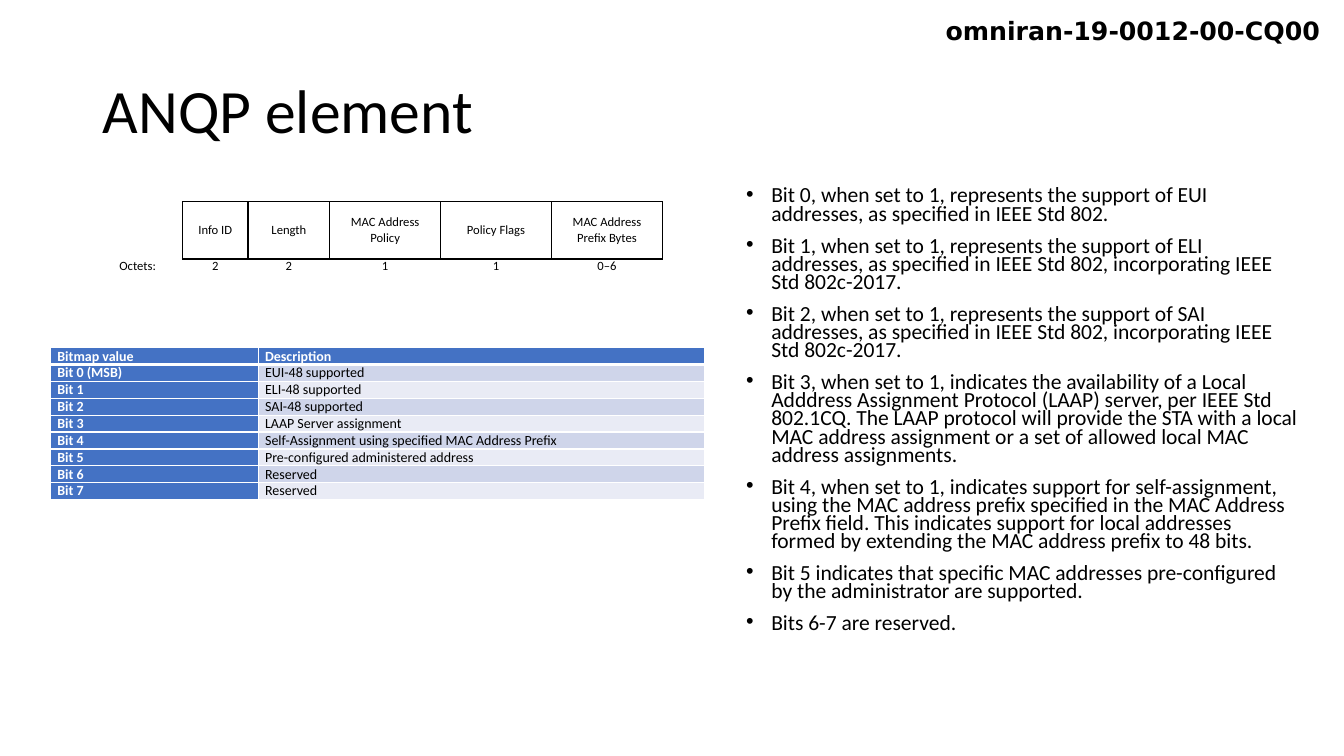
from lxml import etree
from pptx import Presentation
from pptx.dml.color import RGBColor
from pptx.enum.text import MSO_ANCHOR, MSO_AUTO_SIZE, PP_ALIGN
from pptx.oxml.ns import qn
from pptx.util import Inches, Pt

LEFT, CENTER = PP_ALIGN.LEFT, PP_ALIGN.CENTER
TOP, MIDDLE = MSO_ANCHOR.TOP, MSO_ANCHOR.MIDDLE
NO_FIT = MSO_AUTO_SIZE.NONE
COLORS = {"black": "000000", "white": "FFFFFF", "blue": "4472C4",
          "band_dark": "CFD5EA", "band_light": "E9EBF5"}


def write(p, text, size, color="black", bold=False, name="Calibri", align=LEFT):
    p.alignment = align
    r = p.add_run()
    r.text = text
    font = {"size": Pt(size), "bold": bold, "name": name}
    for key, value in font.items():
        setattr(r.font, key, value)
    r.font.color.rgb = RGBColor.from_string(COLORS[color])


def style_cell(cell, fill, borders, anchor):
    """borders maps a side (L, R, T, B) to a colour name and a width in points."""
    layout = {"margin_left": Inches(0.07), "margin_right": Inches(0.07),
              "margin_top": 0, "margin_bottom": 0, "vertical_anchor": anchor}
    for key, value in layout.items():
        setattr(cell, key, value)
    if fill:
        cell.fill.solid()
        cell.fill.fore_color.rgb = RGBColor.from_string(COLORS[fill])
    else:
        cell.fill.background()
    tcPr = cell._tc.get_or_add_tcPr()
    for i, side in enumerate("LRTB"):
        ln = etree.Element(qn(f"a:ln{side}"))
        if side in borders:
            color, width = borders[side]
            ln.set("w", str(Pt(width)))
            solid = etree.SubElement(ln, qn("a:solidFill"))
            etree.SubElement(solid, qn("a:srgbClr"), val=COLORS[color])
        else:
            etree.SubElement(ln, qn("a:noFill"))
        tcPr.insert(i, ln)


prs = Presentation()
prs.slide_width, prs.slide_height = Inches(13.33), Inches(7.5)
s = prs.slides.add_slide(prs.slide_layouts[1])

# Document number
sp = s.shapes.add_textbox(Inches(9.28), Inches(0.1), Inches(4.05), Inches(0.4))
sp.text_frame.word_wrap = False
write(sp.text_frame.paragraphs[0], "omniran-19-0012-00-CQ00", 18, bold=True,
      name="DejaVu Sans")

# Title and body placeholders
title, body = s.shapes.title, s.placeholders[1]
for sp, box, anchor in [(title, (0.92, 0.4, 11.5, 1.45), MIDDLE),
                        (body, (7.3, 1.82, 5.67, 4.76), TOP)]:
    sp.left, sp.top, sp.width, sp.height = [Inches(v) for v in box]
    tf = sp.text_frame
    tf.word_wrap, tf.auto_size, tf.vertical_anchor = True, NO_FIT, anchor
p = title.text_frame.paragraphs[0]
p.line_spacing = 0.9
write(p, "ANQP element", 44)

# Bit explanations
bits = [
    "Bit 0, when set to 1, represents the support of EUI addresses, as specified in IEEE Std 802.",
    "Bit 1, when set to 1, represents the support of ELI addresses, as specified in IEEE Std 802, "
    "incorporating IEEE Std 802c-2017.",
    "Bit 2, when set to 1, represents the support of SAI addresses, as specified in IEEE Std 802, "
    "incorporating IEEE Std 802c-2017.",
    "Bit 3, when set to 1, indicates the availability of a Local Adddress Assignment Protocol "
    "(LAAP) server, per IEEE Std 802.1CQ. The LAAP protocol will provide the STA with a local "
    "MAC address assignment or a set of allowed local MAC address assignments.",
    "Bit 4, when set to 1, indicates support for self-assignment, using the MAC address prefix "
    "specified in the MAC Address Prefix field. This indicates support for local addresses "
    "formed by extending the MAC address prefix to 48 bits.",
    "Bit 5 indicates that specific MAC addresses pre-configured by the administrator are supported.",
    "Bits 6-7 are reserved.",
]
tf = body.text_frame
for i, text in enumerate(bits):
    p = tf.add_paragraph() if i else tf.paragraphs[0]
    p.line_spacing, p.space_before = 0.7, Pt(10)
    write(p, text, 15.4)
    pPr = p._p.get_or_add_pPr()
    pPr.set("marL", str(Inches(0.25)))
    pPr.set("indent", str(Inches(-0.25)))
    etree.SubElement(pPr, qn("a:buFont"), typeface="Arial")
    etree.SubElement(pPr, qn("a:buChar"), char="•")

# Element format: boxed fields above their octet counts
fields = [("", "Octets:"), ("Info ID", "2"), ("Length", "2"), ("MAC Address Policy", "1"),
          ("Policy Flags", "1"), ("MAC Address Prefix Bytes", "0–6")]
widths = [0.89, 0.65, 0.81, 1.1, 1.1, 1.1]
table = s.shapes.add_table(2, len(fields), Inches(0.92), Inches(2),
                           Inches(sum(widths)), Inches(0.71)).table
table.first_row = table.horz_banding = False
table.rows[0].height, table.rows[1].height = Inches(0.57), Inches(0.14)
for c, (column, width) in enumerate(zip(fields, widths)):
    table.columns[c].width = Inches(width)
    for r, text in enumerate(column):
        cell = table.cell(r, c)
        sides = [["R", "LRTB"], ["", "T"]][r][c > 0]
        style_cell(cell, None, {side: ("black", 1) for side in sides}, MIDDLE if r == 0 else TOP)
        p = cell.text_frame.paragraphs[0]
        if r == 0:
            p.space_before = p.space_after = Pt(2)
        if text:
            write(p, text, 9, align=CENTER)

# Bitmap values
bitmap = [("Bitmap value", "Description"), ("Bit 0 (MSB)", "EUI-48 supported"),
          ("Bit 1", "ELI-48 supported"), ("Bit 2", "SAI-48 supported"),
          ("Bit 3", "LAAP Server assignment"),
          ("Bit 4", "Self-Assignment using specified MAC Address Prefix"),
          ("Bit 5", "Pre-configured administered address"),
          ("Bit 6", "Reserved"), ("Bit 7", "Reserved")]
table = s.shapes.add_table(len(bitmap), 2, Inches(0.5), Inches(3.45),
                           Inches(6.49), Inches(1.5)).table
table.columns[0].width, table.columns[1].width = Inches(2.06), Inches(4.43)
for r, row in enumerate(bitmap):
    table.rows[r].height = Inches(1.5 / len(bitmap))
    for c, text in enumerate(row):
        cell = table.cell(r, c)
        heading = r == 0 or c == 0
        fill = "blue" if heading else "band_dark" if r % 2 else "band_light"
        borders = {side: ("white", 1) for side in "LRTB"}
        if r < 2:
            borders["B" if r == 0 else "T"] = ("white", 3)
        style_cell(cell, fill, borders, MIDDLE if r else TOP)
        write(cell.text_frame.paragraphs[0], text, 10,
              "white" if heading else "black", heading)

prs.save("out.pptx")
